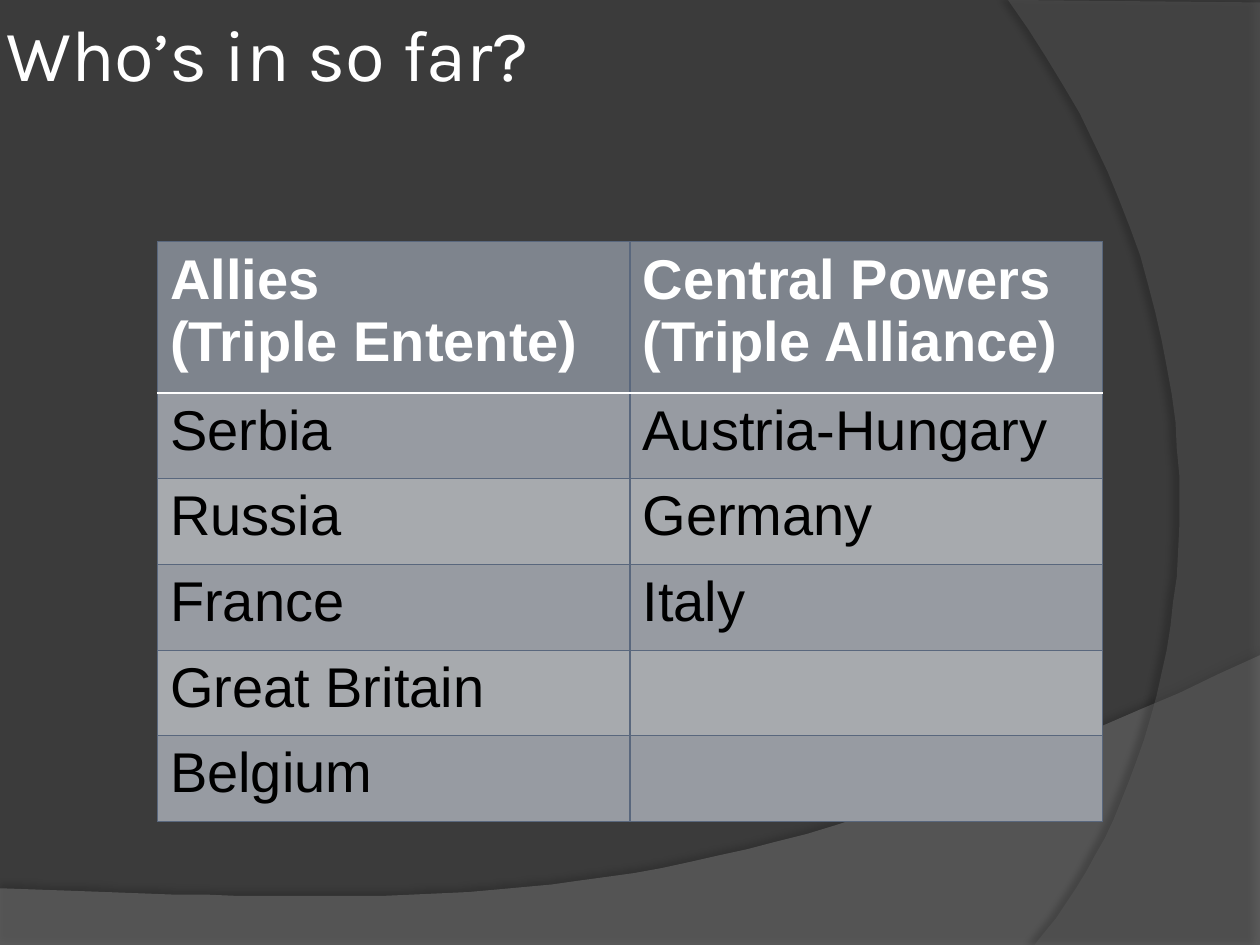
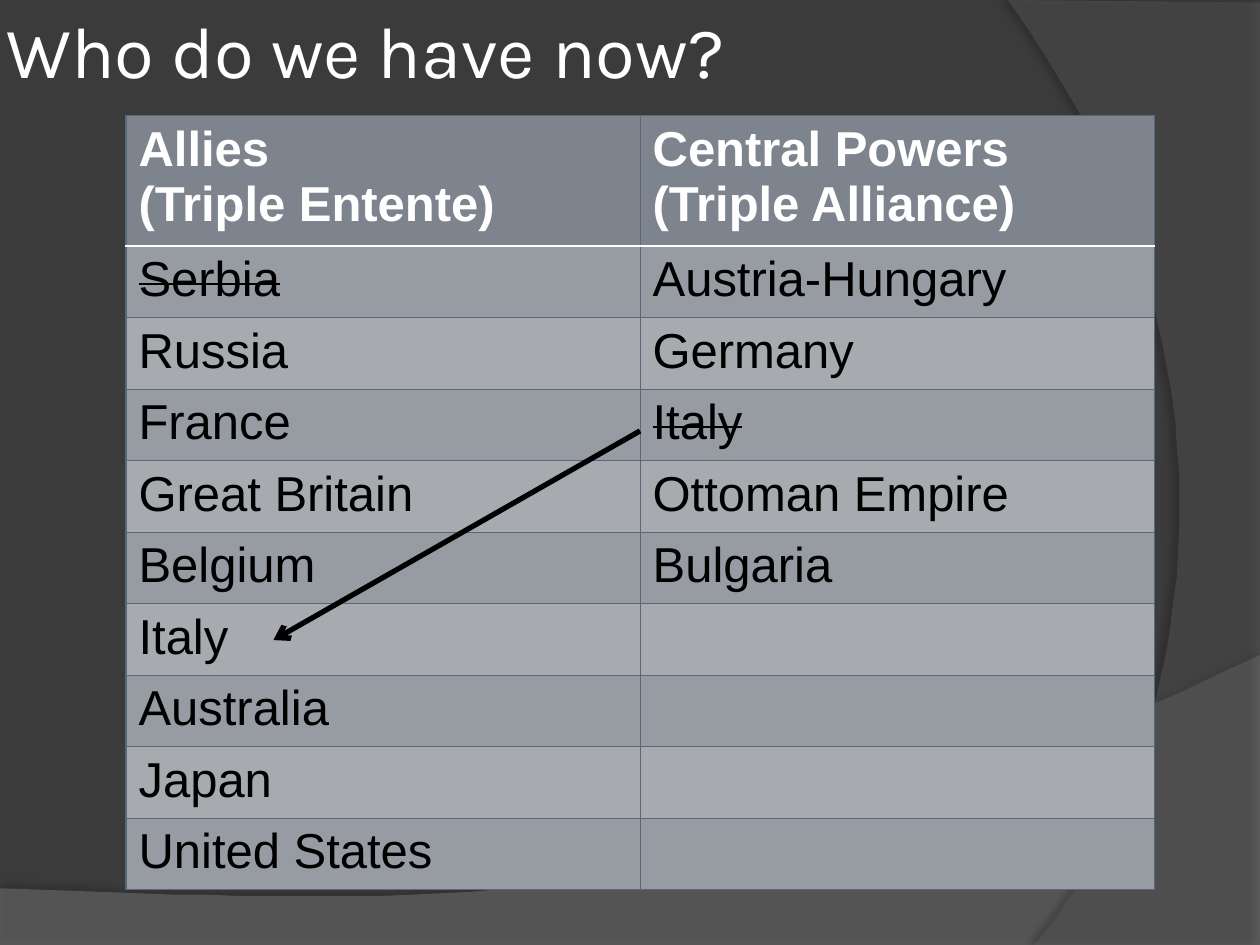
import pptx
import pptx.dml.color
import pptx.enum.shapes
import pptx.enum.text
import pptx.oxml
import pptx.oxml.ns
import pptx.util
from lxml import etree

RGB = pptx.dml.color.RGBColor
PX = 9144  # EMU per px, 100 px to the inch
POINT = 12700

BACKGROUND = RGB(0x3B, 0x3B, 0x3B)
FLOOR_GREY = RGB(0x7F, 0x7F, 0x7F)
SIDE_GREY = RGB(0x5E, 0x5E, 0x5E)
HEADER_FILL = RGB(0x7E, 0x84, 0x8D)
ROW_FILLS = RGB(0x97, 0x9B, 0xA2), RGB(0xA7, 0xAA, 0xAE)
BORDER = RGB(0x59, 0x67, 0x7D)
WHITE = RGB(0xFF, 0xFF, 0xFF)
BLACK = RGB(0x00, 0x00, 0x00)
TITLE_FONT, TABLE_FONT = "Karla", "Arial"

SIDES = ["Allies\n(Triple Entente)", "Central Powers\n(Triple Alliance)"]
SLIDES = [
    dict(
        title="Who’s in so far?", title_height=83,
        members=[["Serbia", "Russia", "France", "Great Britain", "Belgium"],
                 ["Austria-Hungary", "Germany", "Italy"]],
        struck=[], left=125, top=192, column=375, header=120, row=68,
        size=32, switch=None,
    ),
    dict(
        title="Who do we have now?", title_height=78,
        members=[["Serbia", "Russia", "France", "Great Britain", "Belgium",
                  "Italy", "Australia", "Japan", "United States"],
                 ["Austria-Hungary", "Germany", "Italy", "Ottoman Empire", "Bulgaria"]],
        struck=[(0, "Serbia"), (1, "Italy")],
        left=100, top=92, column=408, header=97, row=53,
        size=28, switch=(508, 342, 217, 508),
    ),
]

# Outline: corner points, then the two controls and end of a closing curve.
BANDS = [
    dict(corners=[(0, 705), (0, 751), (1000, 751), (1000, 520)],
         curve=[(559, 729), (391, 719), (0, 705)],
         fill=FLOOR_GREY, opacity=45, shadow=(35, 3.5, 270)),
    dict(corners=[(1000, 2), (1000, 750), (821, 750)],
         curve=[(935, 619), (1018, 300), (800, 0)],
         fill=SIDE_GREY, opacity=40, shadow=(45, 4, 180)),
]


def add_xml(parent, xml):
    """Append a drawing element written without its namespace declaration."""
    head, rest = xml.split(" ", 1)
    parent.append(pptx.oxml.parse_xml(f"{head} {pptx.oxml.ns.nsdecls('a')} {rest}"))


def curve_points(start, controls, steps=40):
    points = [start, *controls]
    for step in range(1, steps + 1):
        t = step / steps
        weights = (1 - t) ** 3, 3 * t * (1 - t) ** 2, 3 * t * t * (1 - t), t ** 3
        yield tuple(sum(w * p[axis] for w, p in zip(weights, points)) for axis in (0, 1))


def add_band(slide, band):
    corners = band["corners"]
    outline = corners + list(curve_points(corners[-1], band["curve"]))
    builder = slide.shapes.build_freeform(*outline[0], scale=PX)
    builder.add_line_segments(outline[1:], close=True)
    shape = builder.convert_to_shape()
    shape.fill.solid()
    shape.fill.fore_color.rgb = band["fill"]
    shape.line.fill.background()
    properties = shape._element.spPr
    color = properties.find(".//" + pptx.oxml.ns.qn("a:srgbClr"))
    add_xml(color, f'<a:alpha val="{band["opacity"] * 1000}"/>')
    strength, distance, angle = band["shadow"]
    add_xml(properties,
            f'<a:effectLst ><a:outerShdw blurRad="{4 * POINT}" dist="{int(distance * POINT)}" '
            f'dir="{angle * 60000}" algn="ctr" rotWithShape="0"><a:srgbClr val="000000">'
            f'<a:alpha val="{strength * 1000}"/></a:srgbClr></a:outerShdw></a:effectLst>')


def style_runs(text_frame, font, size, color, bold=False, struck=False):
    for paragraph in text_frame.paragraphs:
        for run in paragraph.runs:
            run.font.name = font
            run.font.size = pptx.util.Pt(size)
            run.font.bold = bold
            run.font.color.rgb = color
            if struck:
                run._r.get_or_add_rPr().set("strike", "sngStrike")


def add_title(slide, text, height):
    box = slide.shapes.add_textbox(0, 0, 817 * PX, height * PX)
    frame = box.text_frame
    frame.word_wrap = True
    frame.vertical_anchor = pptx.enum.text.MSO_ANCHOR.MIDDLE
    frame.margin_left = frame.margin_right = 5 * PX
    frame.margin_top = frame.margin_bottom = 5 * PX
    frame.text = text
    style_runs(frame, TITLE_FONT, 41.4, WHITE)


def add_borders(cell, row):
    """Thin lines all round, with a white rule below the header row."""
    white_edge = {0: "B", 1: "T"}.get(row)
    for edge in "LRTB":
        color, width = (WHITE, 1.5) if edge == white_edge else (BORDER, 0.75)
        add_xml(cell._tc.get_or_add_tcPr(),
                f'<a:ln{edge} w="{int(width * POINT)}"><a:solidFill>'
                f'<a:srgbClr val="{color}"/></a:solidFill></a:ln{edge}>')


def add_alliances(slide, content):
    count = max(map(len, content["members"]))
    heights = [content["header"]] + [content["row"]] * count
    table = slide.shapes.add_table(
        len(heights), len(SIDES), content["left"] * PX, content["top"] * PX,
        len(SIDES) * content["column"] * PX, sum(heights) * PX).table
    for row, height in enumerate(heights):
        table.rows[row].height = height * PX
    for side, heading in enumerate(SIDES):
        table.columns[side].width = content["column"] * PX
        names = [heading] + content["members"][side]
        names += [""] * (len(heights) - len(names))
        for row, name in enumerate(names):
            is_header = row == 0
            cell = table.cell(row, side)
            add_borders(cell, row)
            cell.fill.solid()
            cell.fill.fore_color.rgb = HEADER_FILL if is_header else ROW_FILLS[(row - 1) % 2]
            cell.text_frame.text = name
            style_runs(cell.text_frame, TABLE_FONT, content["size"],
                       WHITE if is_header else BLACK, is_header,
                       (side, name) in content["struck"])


def add_switch_arrow(slide, ends):
    arrow = slide.shapes.add_connector(
        pptx.enum.shapes.MSO_CONNECTOR.STRAIGHT, *(end * PX for end in ends))
    arrow.line.color.rgb = BLACK
    arrow.line.width = pptx.util.Pt(3)
    add_xml(arrow.line._get_or_add_ln(), '<a:tailEnd type="arrow"/>')
    etree.SubElement(arrow._element.spPr, pptx.oxml.ns.qn("a:effectLst"))


def main():
    deck = pptx.Presentation()
    deck.slide_width, deck.slide_height = 1000 * PX, 750 * PX
    for content in SLIDES:
        slide = deck.slides.add_slide(deck.slide_layouts[6])
        slide.background.fill.solid()
        slide.background.fill.fore_color.rgb = BACKGROUND
        for band in BANDS:
            add_band(slide, band)
        add_title(slide, content["title"], content["title_height"])
        add_alliances(slide, content)
        if content["switch"]:
            add_switch_arrow(slide, content["switch"])
    deck.save("out.pptx")


if __name__ == "__main__":
    main()
